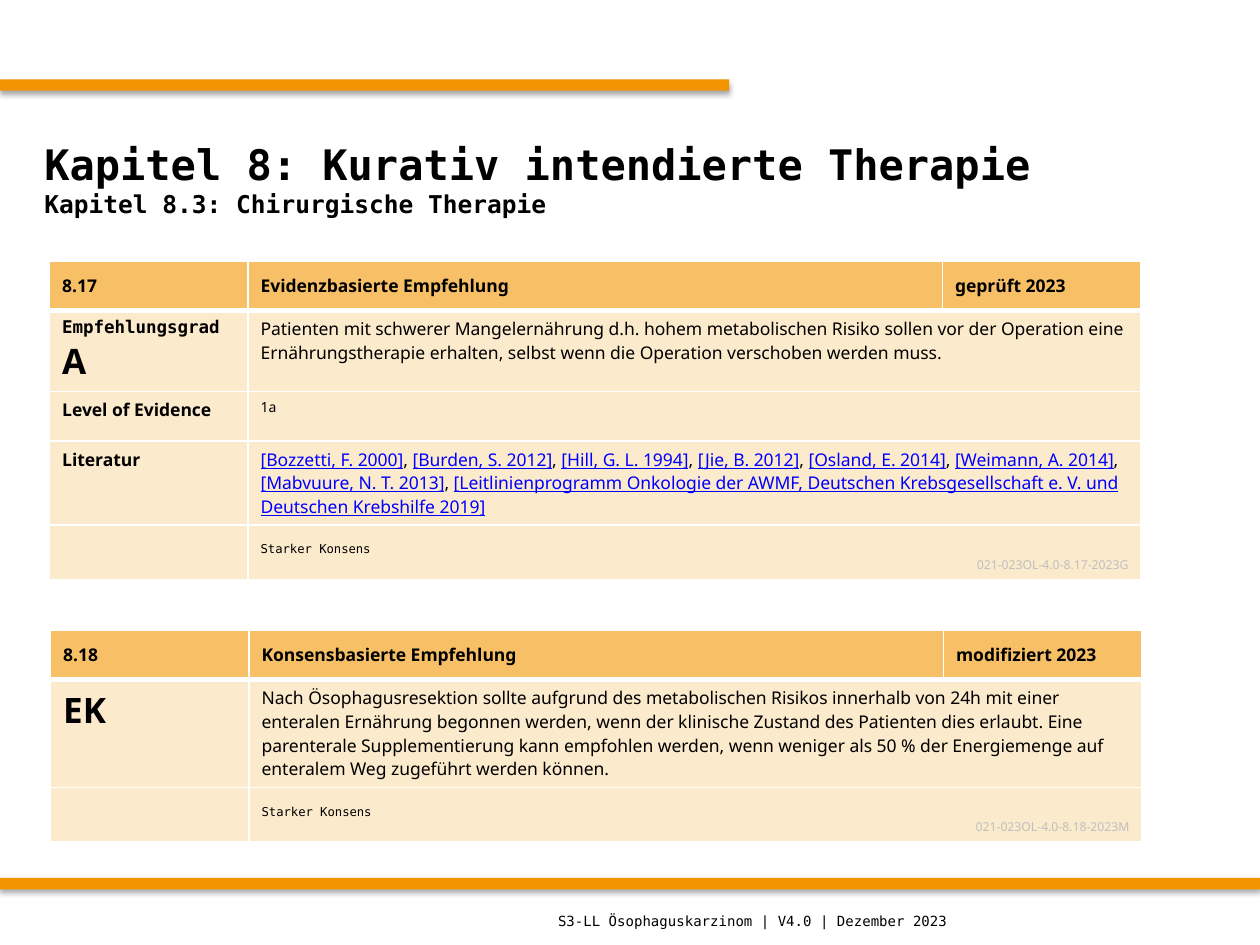
from lxml import etree
from pptx import Presentation
from pptx.dml.color import RGBColor
from pptx.enum.shapes import MSO_SHAPE
from pptx.enum.text import MSO_ANCHOR, MSO_AUTO_SIZE, PP_ALIGN
from pptx.oxml import parse_xml
from pptx.oxml.ns import qn
from pptx.util import Cm, Pt

RECTANGLE = MSO_SHAPE.RECTANGLE
TOP, MIDDLE, BOTTOM = MSO_ANCHOR.TOP, MSO_ANCHOR.MIDDLE, MSO_ANCHOR.BOTTOM
LEFT, RIGHT = PP_ALIGN.LEFT, PP_ALIGN.RIGHT
NO_AUTOFIT = MSO_AUTO_SIZE.NONE

MONO, SANS = "DejaVu Sans Mono", "Noto Sans"
BLACK, WHITE, ORANGE = "000000", "FFFFFF", "F29400"
HEADER_FILL, BODY_FILL = "F7BF66", "FCEACC"
LINK_BLUE, ID_GREY = "0000FF", "BFBFBF"
DRAWING_NS = "http://schemas.openxmlformats.org/drawingml/2006/main"

COLUMN_WIDTHS = (4, 14, 4)
ROW_HEIGHT, CONSENSUS_HEIGHT = 1, 1.1

CITATIONS = (
    "[Bozzetti, F. 2000]", "[Burden, S. 2012]", "[Hill, G. L. 1994]",
    "[Jie, B. 2012]", "[Osland, E. 2014]", "[Weimann, A. 2014]",
    "[Mabvuure, N. T. 2013]",
    "[Leitlinienprogramm Onkologie der AWMF, Deutschen Krebsgesellschaft "
    "e. V. und Deutschen Krebshilfe 2019]",
)


def rgb(hex_color):
    return RGBColor.from_string(hex_color)


def run(text, size=10, font=SANS, color=BLACK, bold=False, underline=False):
    return text, size, font, color, bold, underline


def write(frame, *paragraphs, last_align=LEFT):
    """Each paragraph is a list of runs; the last one may be aligned apart."""
    for index, runs in enumerate(paragraphs):
        paragraph = frame.paragraphs[0] if index == 0 else frame.add_paragraph()
        is_last = index == len(paragraphs) - 1
        paragraph.alignment = last_align if is_last else LEFT
        for text, size, font, color, bold, underline in runs:
            part = paragraph.add_run()
            part.text = text
            part.font.size = Pt(size)
            part.font.name = font
            part.font.color.rgb = rgb(color)
            part.font.bold = bold
            part.font.underline = underline


def add_bar(slide, top, width):
    bar = slide.shapes.add_shape(RECTANGLE, 0, Cm(top), Cm(width), Cm(0.23))
    bar.fill.solid()
    bar.fill.fore_color.rgb = rgb(ORANGE)
    bar.line.fill.background()
    bar.shadow.inherit = False
    effects = bar._element.spPr.find(qn("a:effectLst"))
    effects.append(parse_xml(
        f'<a:outerShdw xmlns:a="{DRAWING_NS}" blurRad="{Pt(3.1)}" '
        f'dist="{Pt(1.8)}" dir="5400000" rotWithShape="0">'
        f'<a:srgbClr val="{BLACK}"><a:alpha val="35000"/></a:srgbClr>'
        '</a:outerShdw>'))


def set_borders(cell, top_width, bottom_width):
    properties = cell._tc.get_or_add_tcPr()
    widths = {"lnL": 1, "lnR": 1, "lnT": top_width, "lnB": bottom_width}
    for side, width in widths.items():
        line = etree.SubElement(properties, qn(f"a:{side}"), w=str(Pt(width)))
        fill = etree.SubElement(line, qn("a:solidFill"))
        etree.SubElement(fill, qn("a:srgbClr"), val=WHITE)


def add_recommendation(slide, left, top, header, rows, code):
    """Header row, labelled rows, then the consensus row with its code."""
    row_count = len(rows) + 2
    table = slide.shapes.add_table(
        row_count, len(COLUMN_WIDTHS), Cm(left), Cm(top),
        Cm(sum(COLUMN_WIDTHS)), Cm(ROW_HEIGHT * row_count)).table
    table.horz_banding = False
    for column, width in zip(table.columns, COLUMN_WIDTHS):
        column.width = Cm(width)
    for row in table.rows:
        row.height = Cm(ROW_HEIGHT)
    table.rows[row_count - 1].height = Cm(CONSENSUS_HEIGHT)

    # Fills and borders, with a thick rule below the header
    for row_index, row in enumerate(table.rows):
        for cell in row.cells:
            set_borders(cell, 3 if row_index == 1 else 1,
                        3 if row_index == 0 else 1)
            cell.fill.solid()
            cell.fill.fore_color.rgb = rgb(BODY_FILL if row_index else HEADER_FILL)
            cell.vertical_anchor = TOP if row_index else MIDDLE
        if row_index:
            table.cell(row_index, 1).merge(table.cell(row_index, 2))

    # Contents
    for column_index, text in enumerate(header):
        write(table.cell(0, column_index).text_frame, [run(text, bold=True)])
    for row_index, (label, content) in enumerate(rows, start=1):
        write(table.cell(row_index, 0).text_frame, *label)
        write(table.cell(row_index, 1).text_frame, content)
    consensus = table.cell(row_count - 1, 1)
    consensus.vertical_anchor = BOTTOM
    write(consensus.text_frame, [run("Starker Konsens", 7, MONO)],
          [run(code, 7, color=ID_GREY)], last_align=RIGHT)


def citation_runs():
    runs = []
    for citation in CITATIONS:
        if runs:
            runs.append(run(", "))
        runs.append(run(citation, color=LINK_BLUE, underline=True))
    return runs


def add_title(slide):
    title = slide.shapes.title
    title.left, title.top = Cm(0.64), Cm(2.11)
    title.width, title.height = Cm(24.13), Cm(2.97)
    title.text_frame.auto_size = NO_AUTOFIT
    title.text_frame.vertical_anchor = MIDDLE
    write(title.text_frame,
          [run("Kapitel 8: Kurativ intendierte Therapie", 24, MONO, bold=True)],
          [run("Kapitel 8.3: Chirurgische Therapie", 14, MONO, bold=True)])


def add_footer(slide):
    footer = slide.shapes.add_textbox(Cm(11), Cm(18.06), Cm(14), Cm(1))
    footer.text_frame.word_wrap = True
    footer.text_frame.vertical_anchor = MIDDLE
    write(footer.text_frame,
          [run("S3-LL Ösophaguskarzinom | V4.0 | Dezember 2023", 8, MONO)])


def main():
    deck = Presentation()
    deck.slide_width, deck.slide_height = Cm(25.4), Cm(19.05)
    slide = deck.slides.add_slide(deck.slide_layouts[5])

    # Frame of the page
    add_bar(slide, 1.6, 14.7)
    add_bar(slide, 17.7, 25.4)
    add_title(slide)

    # Recommendation 8.17
    add_recommendation(
        slide, 1, 5.26,
        ("8.17", "Evidenzbasierte Empfehlung", "geprüft 2023"),
        [
            ([[run("Empfehlungsgrad", font=MONO, bold=True)],
              [run("A", 20, bold=True)]],
             [run("Patienten mit schwerer Mangelernährung d.h. hohem "
                  "metabolischen Risiko sollen vor der Operation eine "
                  "Ernährungstherapie erhalten, selbst wenn die Operation "
                  "verschoben werden muss.")]),
            ([[run("Level of Evidence", bold=True)]], [run("1a", 8)]),
            ([[run("Literatur", bold=True)]], citation_runs()),
        ],
        "021-023OL-4.0-8.17-2023G")

    # Recommendation 8.18
    add_recommendation(
        slide, 1.02, 12.7,
        ("8.18", "Konsensbasierte Empfehlung", "modifiziert 2023"),
        [
            ([[run("EK", 20, bold=True)]],
             [run("Nach Ösophagusresektion sollte aufgrund des metabolischen "
                  "Risikos innerhalb von 24h mit einer enteralen Ernährung "
                  "begonnen werden, wenn der klinische Zustand des Patienten "
                  "dies erlaubt. Eine parenterale Supplementierung kann "
                  "empfohlen werden, wenn weniger als 50 % der Energiemenge "
                  "auf enteralem Weg zugeführt werden können.")]),
        ],
        "021-023OL-4.0-8.18-2023M")

    add_footer(slide)
    deck.save("out.pptx")


if __name__ == "__main__":
    main()
